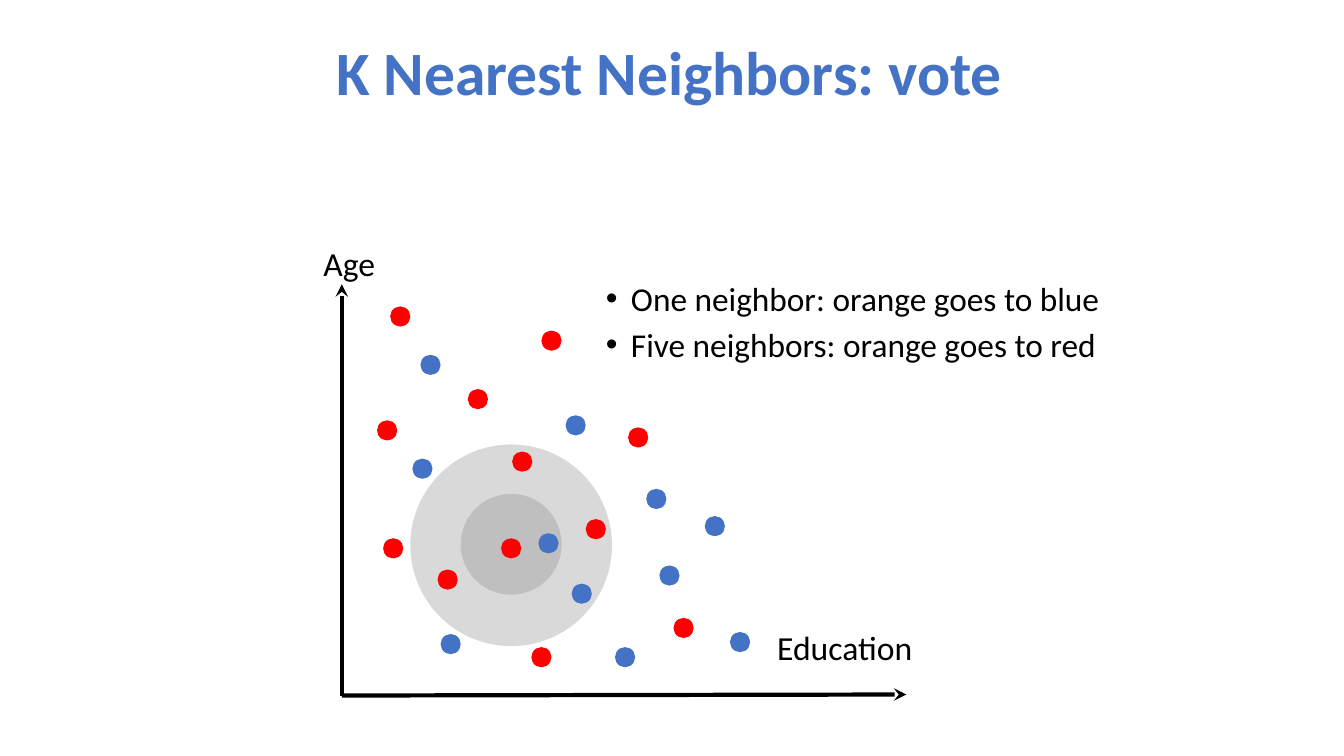
from dataclasses import dataclass

from lxml import etree
from pptx import Presentation
from pptx import util as u
from pptx.dml.color import RGBColor
from pptx.enum import shapes, text
from pptx.oxml import ns

TITLE = "K Nearest Neighbors: vote"
VOTES = ["One neighbor: orange goes to blue", "Five neighbors: orange goes to red"]
AXIS_NAMES = [("Age", (3.11, 2.36, 1.56, 0.5)), ("Education", (7.61, 6.17, 2.17, 0.5))]

# Centres of the points, in inches on the slide
BLUE_POINTS = [
    (5.71, 4.22), (5.44, 5.39), (5.77, 5.89), (6.64, 5.71), (7.09, 5.22), (4.27, 3.62),
    (6.51, 4.95), (4.47, 6.39), (7.34, 6.37), (4.19, 4.65), (6.2, 6.52),
]
RED_POINTS = [
    (4.44, 5.75), (6.33, 4.34), (3.84, 4.27), (5.18, 4.58), (5.47, 3.38), (6.78, 6.23),
    (3.97, 3.14), (5.91, 5.25), (5.37, 6.52), (4.74, 3.96), (3.9, 5.44),
]
QUERY_POINT = (5.07, 5.44)
ORIGIN = (3.39, 6.9)
AXIS_TIPS = [(8.99, 6.89), (3.39, 2.82)]
DOT = 0.2


@dataclass(frozen=True)
class Theme:
    font: str = "Calibri"
    blue: str = "4472C4"
    red: str = "FF0000"
    black: str = "000000"
    five_zone: str = "D9D9D9"
    one_zone: str = "BFBFBF"
    title_size: float = 44
    label_size: float = 24
    vote_size: float = 23.8
    axis_width: float = 3


THEME = Theme()
# Centre, diameter and colour, widest first
ZONES = [((5.07, 5.41), 2, THEME.five_zone), ((5.07, 5.4), 1, THEME.one_zone)]


def inches(values):
    return [u.Inches(value) for value in values]


def add_circle(parent, centre, diameter, color):
    left, top = (value - diameter / 2 for value in centre)
    shape = parent.add_shape(
        shapes.MSO_SHAPE.OVAL, *inches((left, top, diameter, diameter)))
    shape.shadow.inherit = False
    shape.fill.solid()
    shape.fill.fore_color.rgb = RGBColor.from_string(color)
    shape.line.fill.background()


def add_text(slide, box, lines, size, color=THEME.black, bold=False):
    frame = slide.shapes.add_textbox(*inches(box)).text_frame
    frame.word_wrap = True
    for number, line in enumerate(lines):
        paragraph = frame.add_paragraph() if number else frame.paragraphs[0]
        run = paragraph.add_run()
        run.text = line
        run.font.name = THEME.font
        run.font.size = u.Pt(size)
        run.font.bold = bold
        run.font.color.rgb = RGBColor.from_string(color)
    return frame


def add_bullet(paragraph):
    properties = paragraph._p.get_or_add_pPr()
    properties.set("marL", str(u.Inches(0.25)))
    properties.set("indent", str(-u.Inches(0.25)))
    etree.SubElement(properties, ns.qn("a:buFont"), typeface="Arial")
    etree.SubElement(properties, ns.qn("a:buChar"), char="•")


def add_axis(slide, tip):
    axis = slide.shapes.add_connector(
        shapes.MSO_CONNECTOR.STRAIGHT, *inches(ORIGIN + tip))
    axis.line.color.rgb = RGBColor.from_string(THEME.black)
    axis.line.width = u.Pt(THEME.axis_width)
    etree.SubElement(axis.line._get_or_add_ln(), ns.qn("a:tailEnd"), type="stealth")
    etree.SubElement(axis._element.spPr, ns.qn("a:effectLst"))


def main():
    presentation = Presentation()
    presentation.slide_width, presentation.slide_height = inches((13.33, 7.5))
    slide = presentation.slides.add_slide(presentation.slide_layouts[6])

    for centre, diameter, color in ZONES:
        add_circle(slide.shapes, centre, diameter, color)

    votes = add_text(slide, (5.91, 2.79, 5.28, 1.37), VOTES, THEME.vote_size)
    for paragraph in votes.paragraphs:
        paragraph.line_spacing = 0.8
        paragraph.space_before = u.Pt(10)
        add_bullet(paragraph)

    title = add_text(slide, (0.89, 0.02, 11.5, 1.45), [TITLE],
                     THEME.title_size, THEME.blue, bold=True)
    title.vertical_anchor = text.MSO_ANCHOR.MIDDLE
    title.paragraphs[0].alignment = text.PP_ALIGN.CENTER
    title.paragraphs[0].line_spacing = 0.9

    for tip in AXIS_TIPS:
        add_axis(slide, tip)
    for name, box in AXIS_NAMES:
        label = add_text(slide, box, [name], THEME.label_size)
        label.auto_size = text.MSO_AUTO_SIZE.SHAPE_TO_FIT_TEXT

    for points, color in [(BLUE_POINTS, THEME.blue), (RED_POINTS, THEME.red)]:
        group = slide.shapes.add_group_shape()
        for centre in points:
            add_circle(group.shapes, centre, DOT, color)
    add_circle(slide.shapes, QUERY_POINT, DOT, THEME.red)

    presentation.save("out.pptx")


if __name__ == "__main__":
    main()
